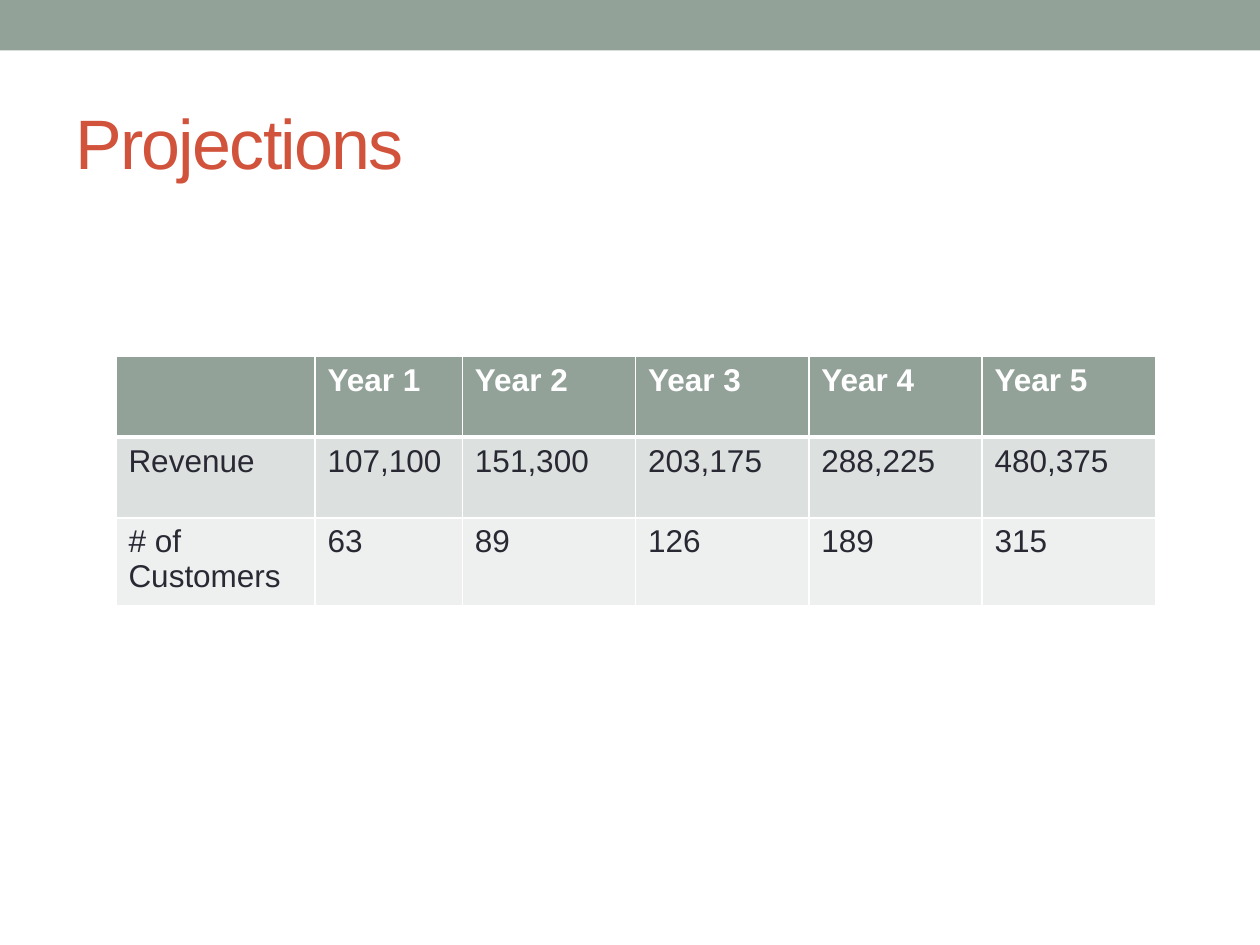
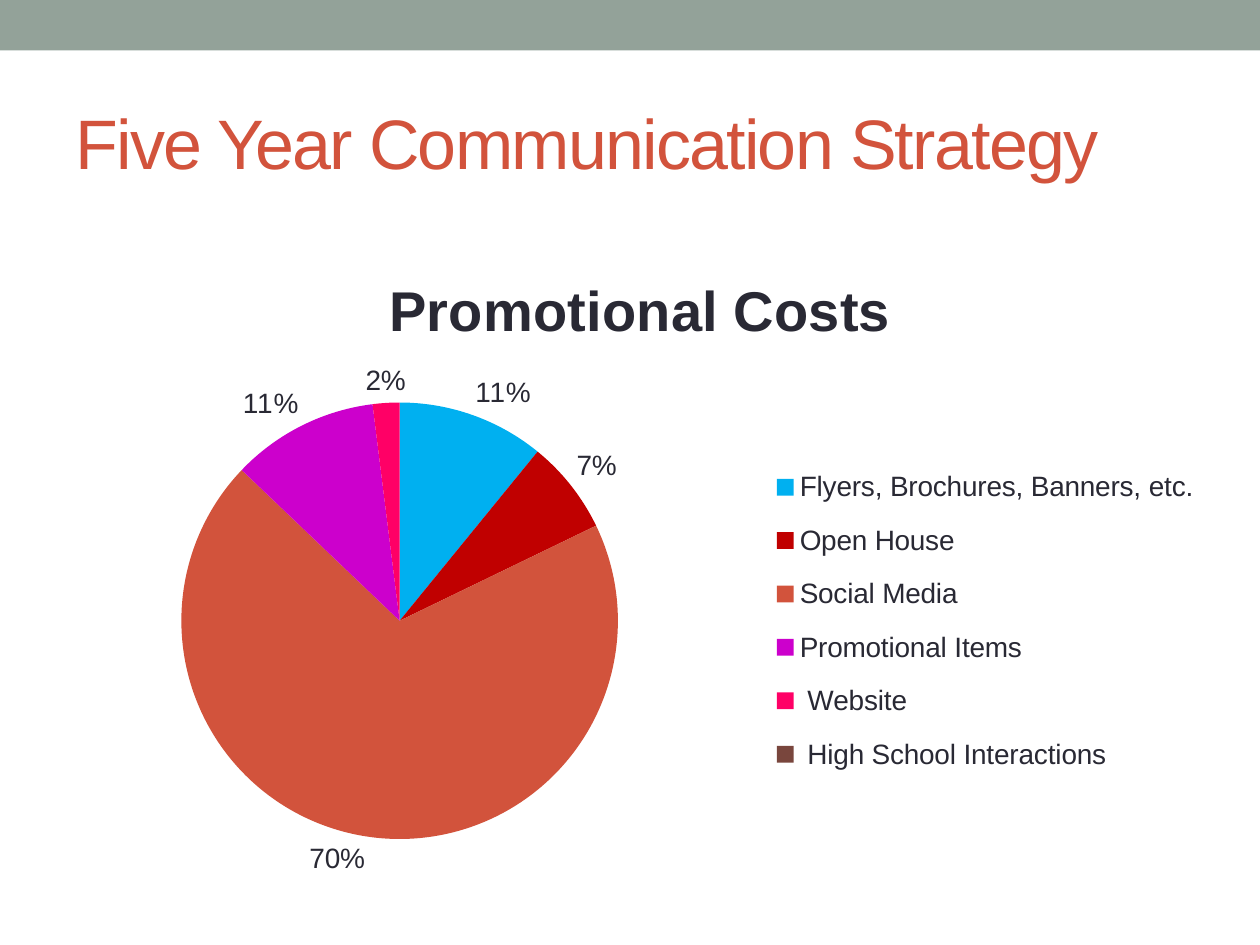
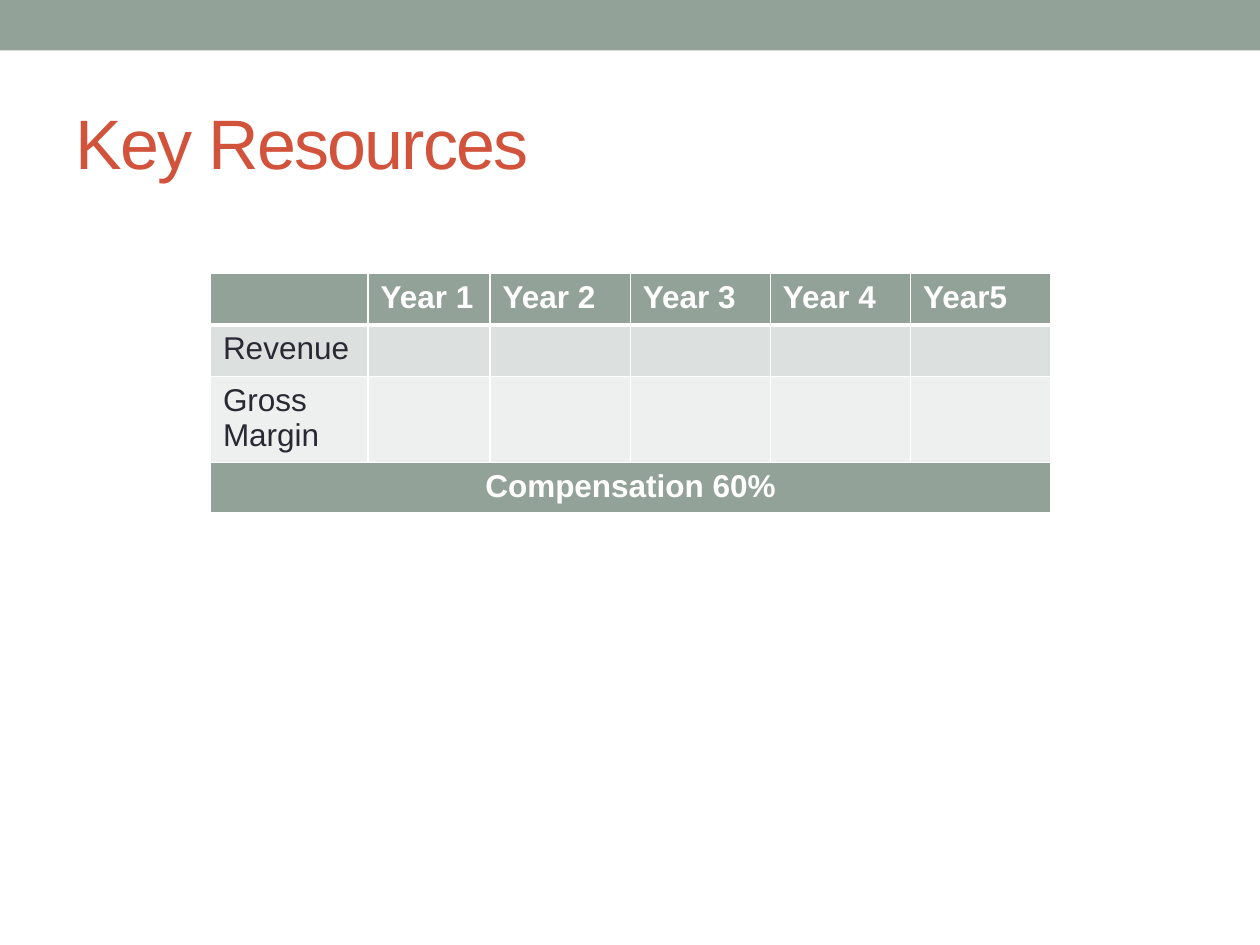
import pptx
import pptx.util
import pptx.chart.data
import pptx.dml.color
import pptx.enum.chart
import pptx.enum.shapes
import pptx.enum.text
import pptx.oxml.ns
import lxml.etree

Inches = pptx.util.Inches
RGB = pptx.dml.color.RGBColor
qn = pptx.oxml.ns.qn

# Shared look
SAGE = RGB(0x93, 0xA2, 0x99)
RUST = RGB(0xD2, 0x53, 0x3C)
INK = RGB(0x29, 0x29, 0x34)
WHITE = RGB(0xFF, 0xFF, 0xFF)
BANDS = [RGB(0xDC, 0xE0, 0xDE), RGB(0xEE, 0xF0, 0xEF)]
FONT = "Arial"
WIDE, HIGH = 10, 7.5

# Content
GROWTH = [
    ["", "Year 1", "Year 2", "Year 3", "Year 4", "Year 5"],
    ["Revenue", "107,100", "151,300", "203,175", "288,225", "480,375"],
    ["# of Customers", "63", "89", "126", "189", "315"],
]
STAFF = [
    ["", "Year 1", "Year 2", "Year 3", "Year 4", "Year5"],
    ["Revenue"] + [""] * 5,
    ["Gross Margin"] + [""] * 5,
]
PAY = [["Compensation 60%"]]
COSTS = [
    ("Flyers, Brochures, Banners, etc.", 11, RGB(0x00, 0xB0, 0xF0)),
    ("Open House", 7, RGB(0xC0, 0x00, 0x00)),
    ("Social Media", 70, RUST),
    ("Promotional Items", 11, RGB(0xCC, 0x00, 0xCC)),
    (" Website", 2, RGB(0xFF, 0x00, 0x66)),
    (" High School Interactions", 0, RGB(0x79, 0x46, 0x3D)),
]


def write(frame, text, size=18, color=INK, bold=False, align=None, track=0):
    para = frame.paragraphs[0]
    para.alignment = align
    run = para.add_run()
    run.text = text
    style(run.font, size, color, bold)
    if track:
        run.font._element.set("spc", str(track))


def style(font, size, color=INK, bold=False):
    font.name, font.size, font.bold = FONT, pptx.util.Pt(size), bold
    font.color.rgb = color


def start(deck, title, width=9):
    """Add a slide with the top band and its title."""
    slide = deck.slides.add_slide(deck.slide_layouts[6])
    band = slide.shapes.add_shape(pptx.enum.shapes.MSO_SHAPE.RECTANGLE,
                                  0, 0, Inches(WIDE), Inches(0.4))
    band.shadow.inherit = False
    band.fill.solid()
    band.fill.fore_color.rgb = SAGE
    band.line.fill.background()
    box = slide.shapes.add_textbox(Inches(0.5), Inches(0.58), Inches(width), Inches(1.08))
    box.text_frame.word_wrap = True
    box.text_frame.vertical_anchor = pptx.enum.text.MSO_ANCHOR.MIDDLE
    write(box.text_frame, title, size=40, color=RUST, track=-100)
    return slide


def edge(cell, **sides):
    """Draw white cell borders, widths in points by side."""
    props = cell._tc.get_or_add_tcPr()
    for spot, side in enumerate("LRTB"):
        line = lxml.etree.Element(qn("a:ln" + side), w=str(pptx.util.Pt(sides.get(side, 1))))
        fill = lxml.etree.SubElement(line, qn("a:solidFill"))
        lxml.etree.SubElement(fill, qn("a:srgbClr"), val=str(WHITE))
        props.insert(spot, line)


def grid(slide, rows, left, top, width, tall, lead=(), align=None):
    """Place a table; columns after the lead ones share the rest equally."""
    count = len(rows[0])
    table = slide.shapes.add_table(len(rows), count, Inches(left), Inches(top),
                                   Inches(width), Inches(tall * len(rows))).table
    rest = (width - sum(lead)) / (count - len(lead))
    for col, size in zip(table.columns, list(lead) + [rest] * (count - len(lead))):
        col.width = Inches(size)
    for r, row in enumerate(rows):
        table.rows[r].height = Inches(tall)
        head = r == 0
        for c, text in enumerate(row):
            cell = table.cell(r, c)
            cell.fill.solid()
            cell.fill.fore_color.rgb = SAGE if head else BANDS[(r - 1) % 2]
            edge(cell, T=3 if r == 1 else 1, B=3 if head else 1)
            if text:
                write(cell.text_frame, text, color=WHITE if head else INK,
                      bold=head, align=align)


def place(node, spot, inner=False, **share):
    """Fix a chart part by shares of the chart's size."""
    for old in node.findall(qn("c:layout")):
        node.remove(old)
    layout = lxml.etree.Element(qn("c:layout"))
    manual = lxml.etree.SubElement(layout, qn("c:manualLayout"))
    marks = [("layoutTarget", "inner")] if inner else []
    marks += [("xMode", "edge"), ("yMode", "edge")] + list(share.items())
    for name, val in marks:
        lxml.etree.SubElement(manual, qn("c:" + name), val=str(val))
    node.insert(spot, layout)


def pie(slide):
    data = pptx.chart.data.CategoryChartData()
    data.categories = [name for name, _, _ in COSTS]
    data.add_series("Series 1", [val for _, val, _ in COSTS])
    kind = pptx.enum.chart
    chart = slide.shapes.add_chart(kind.XL_CHART_TYPE.PIE, Inches(0.42), Inches(1.83),
                                   Inches(9.25), Inches(5.25), data).chart
    style(chart.font, 10)
    chart.has_title = True
    write(chart.chart_title.text_frame, "Promotional Costs", size=32, bold=True)
    chart.has_legend = True
    chart.legend.position = kind.XL_LEGEND_POSITION.RIGHT
    chart.legend.include_in_layout = False
    style(chart.legend.font, 16)

    # Slices and their labels; a zero slice has none
    plot = chart.plots[0]
    plot.vary_by_categories = True
    for i, (_, _, color) in enumerate(COSTS):
        fill = plot.series[0].points[i].format.fill
        fill.solid()
        fill.fore_color.rgb = color
    plot.has_data_labels = True
    labels = plot.data_labels
    labels.show_value = True
    labels.show_percentage = False
    labels.number_format = '0"%";;'
    labels.number_format_is_linked = False
    labels.position = kind.XL_LABEL_POSITION.OUTSIDE_END
    style(labels.font, 16)

    root = chart.element.find(qn("c:chart"))
    place(root.find(qn("c:title")), 1, x=0.28, y=0.05)
    place(root.find(qn("c:plotArea")), 0, inner=True, x=0.11, y=0.26, w=0.375, h=0.66)
    place(root.find(qn("c:legend")), 1, x=0.61, y=0.33, w=0.38, h=0.52)


def main():
    deck = pptx.Presentation()
    deck.slide_width, deck.slide_height = Inches(WIDE), Inches(HIGH)

    # Projections
    slide = start(deck, "Projections")
    grid(slide, GROWTH, 0.92, 2.83, 8.25, 0.64, lead=(1.58, 1.17))

    # Communication costs
    pie(start(deck, "Five Year Communication Strategy", width=9.25))

    # Resources, with the pay row below
    slide = start(deck, "Key Resources")
    grid(slide, STAFF, 1.67, 2.17, 6.67, 0.41, lead=(1.25, 0.97))
    grid(slide, PAY, 1.67, 3.67, 6.67, 0.41, align=pptx.enum.text.PP_ALIGN.CENTER)

    deck.save("out.pptx")


if __name__ == "__main__":
    main()
